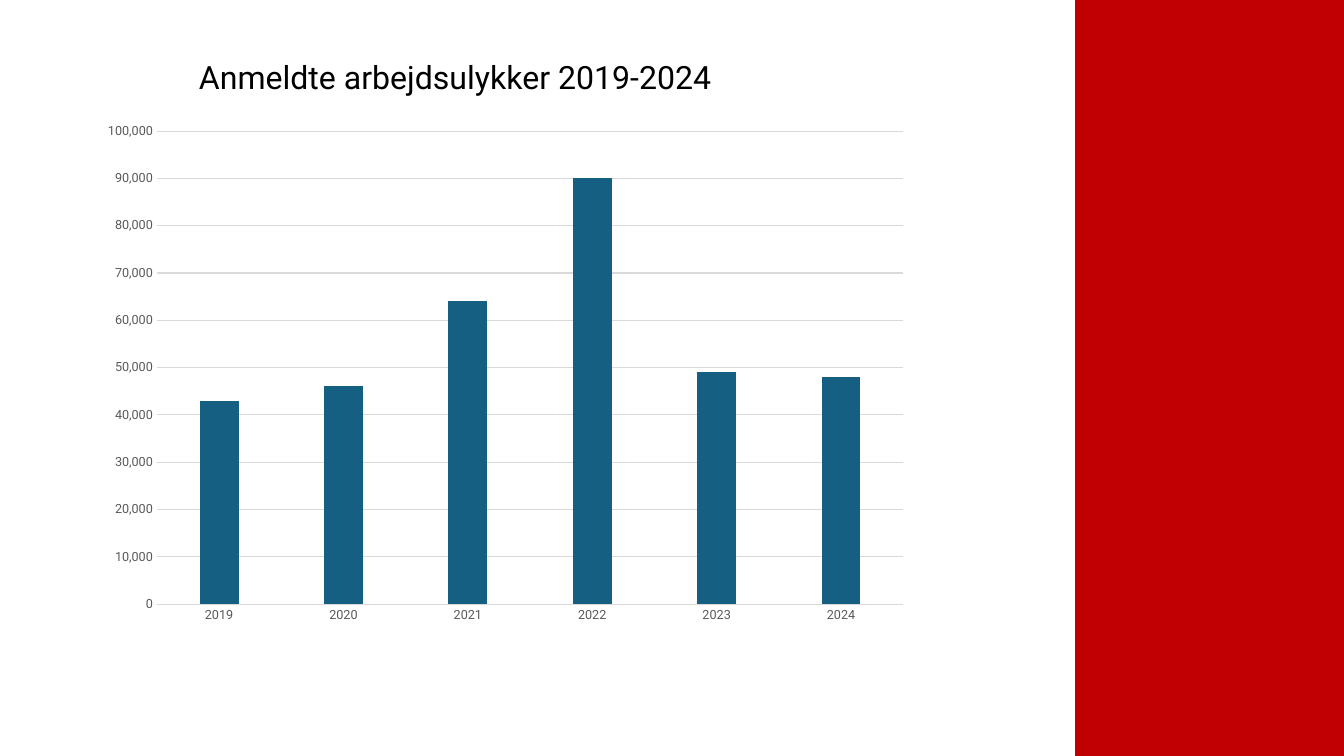
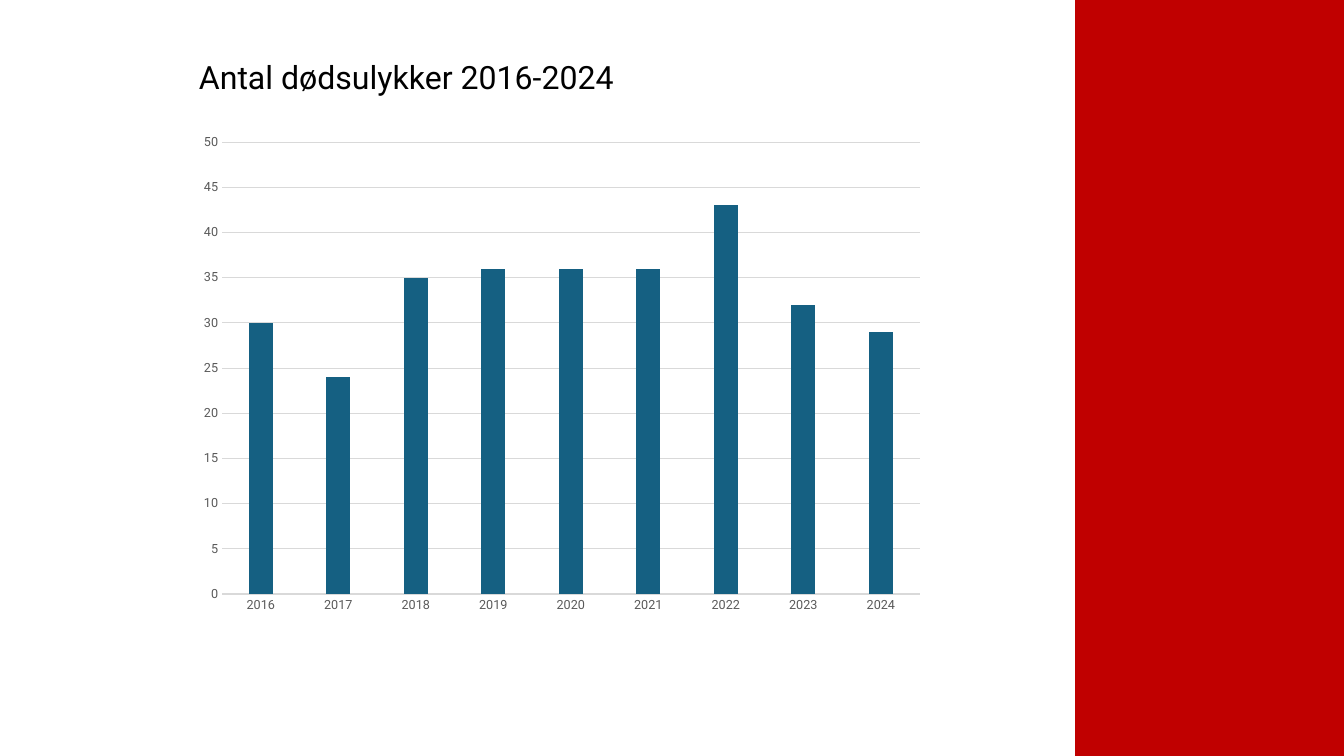
from dataclasses import dataclass

from pptx import Presentation
from pptx.chart.axis import CategoryAxis, ValueAxis
from pptx.chart.data import CategoryChartData
from pptx.dml.color import RGBColor
from pptx.enum.chart import XL_CHART_TYPE, XL_TICK_MARK
from pptx.enum.shapes import MSO_SHAPE
from pptx.enum.text import MSO_ANCHOR
from pptx.slide import Slide
from pptx.text.text import Font
from pptx.util import Emu, Pt

EMU_PER_PX = 9525
FONT_NAME = "Roboto"
BLACK = "000000"
BAND_RED = "C00000"
BAR_BLUE = "156082"
LABEL_GRAY = "595959"
GRID_GRAY = "D9D9D9"


@dataclass(frozen=True)
class Box:
    left: int
    top: int
    width: int
    height: int

    def emu(self) -> tuple[Emu, Emu, Emu, Emu]:
        return px(self.left), px(self.top), px(self.width), px(self.height)


@dataclass(frozen=True)
class ChartSlide:
    title: str
    box: Box
    first_year: int
    values: tuple[int, ...]
    axis_maximum: int
    axis_step: int
    number_format: str


SLIDE_WIDTH, SLIDE_HEIGHT = 1280, 720
BAND_BOX = Box(1024, 0, 256, SLIDE_HEIGHT)
TITLE_BOX = Box(180, 43, 777, 65)

CHART_SLIDES = (
    ChartSlide(
        "Anmeldte arbejdsulykker 2019-2024",
        Box(87, 108, 789, 495),
        2019,
        (43000, 46000, 64000, 90000, 49000, 48000),
        100000,
        10000,
        "#,##0",
    ),
    ChartSlide(
        "Antal dødsulykker 2016-2024",
        Box(180, 119, 710, 474),
        2016,
        (30, 24, 35, 36, 36, 36, 43, 32, 29),
        50,
        5,
        "General",
    ),
)


def px(length: int) -> Emu:
    return Emu(length * EMU_PER_PX)


def color(value: str) -> RGBColor:
    return RGBColor.from_string(value)


def style_font(font: Font, size: float, font_color: str) -> None:
    font.name = FONT_NAME
    font.size = Pt(size)
    font.bold = False
    font.color.rgb = color(font_color)


def add_band(slide: Slide) -> None:
    band = slide.shapes.add_shape(MSO_SHAPE.RECTANGLE, *BAND_BOX.emu())
    band.shadow.inherit = False
    band.fill.solid()
    band.fill.fore_color.rgb = color(BAND_RED)
    band.line.fill.background()


def add_title(slide: Slide, title: str) -> None:
    text_frame = slide.shapes.add_textbox(*TITLE_BOX.emu()).text_frame
    text_frame.word_wrap = True
    text_frame.vertical_anchor = MSO_ANCHOR.MIDDLE
    paragraph = text_frame.paragraphs[0]
    paragraph.line_spacing = 0.9
    run = paragraph.add_run()
    run.text = title
    style_font(run.font, 22.9, BLACK)


def style_axis(axis: CategoryAxis | ValueAxis) -> None:
    axis.major_tick_mark = XL_TICK_MARK.NONE
    axis.minor_tick_mark = XL_TICK_MARK.NONE
    style_font(axis.tick_labels.font, 9, LABEL_GRAY)


def add_column_chart(slide: Slide, content: ChartSlide) -> None:
    chart_data = CategoryChartData(number_format=content.number_format)
    chart_data.categories = [
        str(content.first_year + index) for index in range(len(content.values))
    ]
    chart_data.add_series("Series 1", content.values)
    chart = slide.shapes.add_chart(
        XL_CHART_TYPE.COLUMN_CLUSTERED, *content.box.emu(), chart_data
    ).chart
    chart.has_title = False
    chart.has_legend = False
    style_font(chart.font, 10, BLACK)

    plot = chart.plots[0]
    plot.gap_width = 219
    plot.overlap = -27
    plot.vary_by_categories = False
    bar_fill = plot.series[0].format.fill
    bar_fill.solid()
    bar_fill.fore_color.rgb = color(BAR_BLUE)

    category_axis, value_axis = chart.category_axis, chart.value_axis
    style_axis(category_axis)
    style_axis(value_axis)
    value_axis.has_major_gridlines = True
    for line in (category_axis.format.line, value_axis.major_gridlines.format.line):
        line.color.rgb = color(GRID_GRAY)
        line.width = Pt(0.75)
    value_axis.format.line.fill.background()
    value_axis.minimum_scale = 0
    value_axis.maximum_scale = content.axis_maximum
    value_axis.major_unit = content.axis_step
    value_axis.tick_labels.number_format = content.number_format
    value_axis.tick_labels.number_format_is_linked = False


def main() -> None:
    presentation = Presentation()
    presentation.slide_width = px(SLIDE_WIDTH)
    presentation.slide_height = px(SLIDE_HEIGHT)
    blank_layout = presentation.slide_layouts[6]
    for content in CHART_SLIDES:
        slide = presentation.slides.add_slide(blank_layout)
        add_band(slide)
        add_title(slide, content.title)
        add_column_chart(slide, content)
    presentation.save("out.pptx")


if __name__ == "__main__":
    main()
